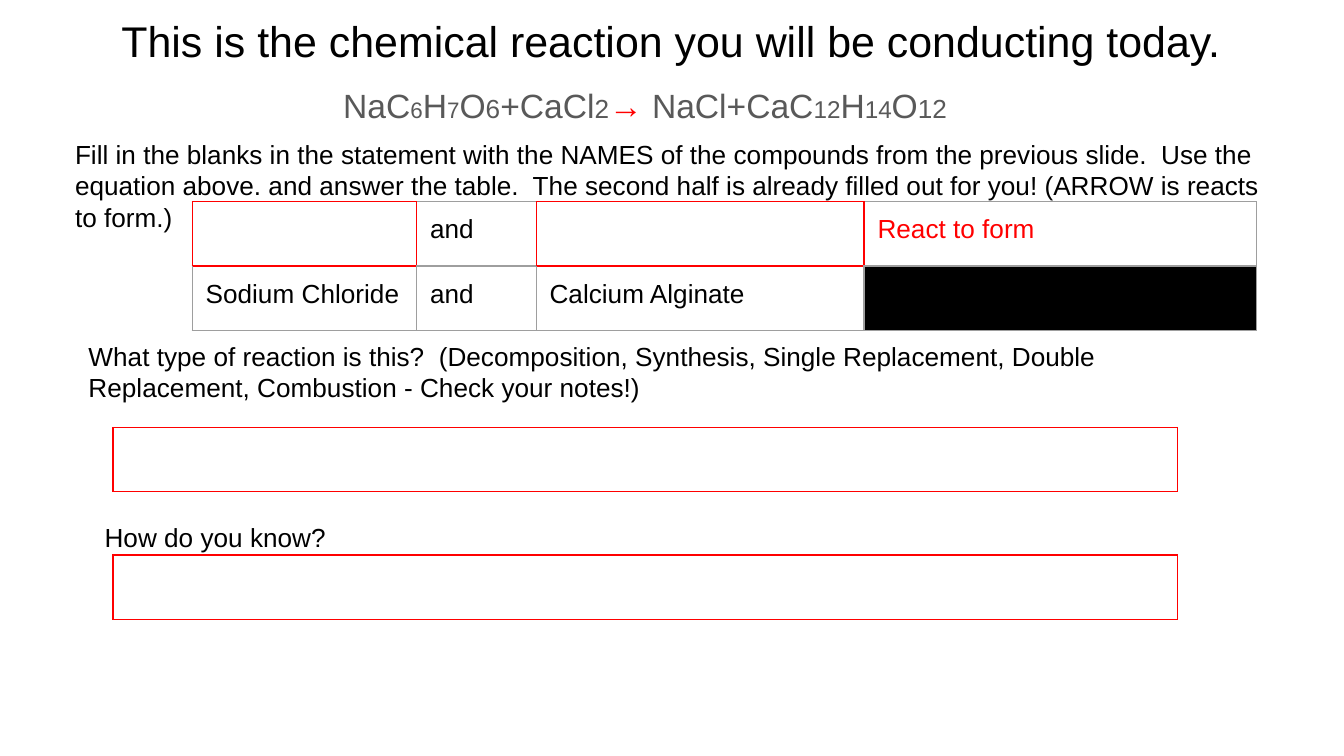
from typing import NamedTuple

from lxml import etree
from pptx import Presentation
from pptx.dml.color import RGBColor
from pptx.enum import text as t
from pptx.oxml import ns
from pptx.util import Inches, Pt

BLACK = RGBColor(0x00, 0x00, 0x00)
GRAY = RGBColor(0x59, 0x59, 0x59)
RULE = RGBColor(0x9E, 0x9E, 0x9E)
RED = RGBColor(0xFF, 0x00, 0x00)
FONT = "Arial"
BODY_SIZE = 14
MARGIN = Inches(0.1)
ROW_HEIGHT = 0.48


class Span(NamedTuple):
    text: str
    size: float = BODY_SIZE
    color: RGBColor = BLACK


class Label(NamedTuple):
    left: float
    top: float
    width: float
    height: float
    text: str


class Cell(NamedTuple):
    text: str = ""
    color: RGBColor = BLACK
    filled: bool = False

    @property
    def is_answer(self) -> bool:
        return not self.text and not self.filled


class Grid(NamedTuple):
    left: float
    top: float
    widths: list[float]
    rows: list[list[Cell]]


EQUATION = [
    Span("NaC", 18, GRAY), Span("6", 12, GRAY),
    Span("H", 18, GRAY), Span("7", 12, GRAY),
    Span("O", 18, GRAY), Span("6", 14, GRAY),
    Span("+CaCl", 18, GRAY), Span("2", 14, GRAY),
    Span("→", 18, RED),
    Span(" NaCl+CaC", 18, GRAY), Span("12", 13, GRAY),
    Span("H", 18, GRAY), Span("14", 13, GRAY),
    Span("O", 18, GRAY), Span("12", 14, GRAY),
]
LABELS = [
    Label(0.46, 0.93, 9.09, 0.49,
          "Fill in the blanks in the statement with the NAMES of the compounds "
          "from the previous slide.  Use the equation above. and answer the table.  "
          "The second half is already filled out for you! (ARROW is reacts to form.)"),
    Label(0.56, 2.43, 8.88, 0.68,
          "What type of reaction is this?  (Decomposition, Synthesis, Single "
          "Replacement, Double Replacement, Combustion - Check your notes!)"),
    Label(0.68, 3.78, 8.88, 0.49, "How do you know?"),
]
GRIDS = [
    Grid(1.43, 1.5, [1.67, 0.89, 2.44, 2.92], [
        [Cell(), Cell("and"), Cell(), Cell("React to form", RED)],
        [Cell("Sodium Chloride"), Cell("and"), Cell("Calcium Alginate"),
         Cell(filled=True)],
    ]),
    Grid(0.84, 3.18, [7.92], [[Cell()]]),
    Grid(0.84, 4.13, [7.92], [[Cell()]]),
]
# Border tag and the row and column step to the neighbour on that side
SIDES = [("a:lnL", 0, -1), ("a:lnR", 0, 1), ("a:lnT", -1, 0), ("a:lnB", 1, 0)]


def add_span(para, span: Span) -> None:
    run = para.add_run()
    run.text = span.text
    run.font.name = FONT
    run.font.size = Pt(span.size)
    run.font.color.rgb = span.color


def set_empty_size(para, size: float) -> None:
    """Set the line height that an empty paragraph takes."""
    end = etree.SubElement(para._p, ns.qn("a:endParaRPr"), sz=str(size * 100))
    etree.SubElement(end, ns.qn("a:latin"), typeface=FONT)


def set_margins(target) -> None:
    target.margin_left = target.margin_right = MARGIN
    target.margin_top = target.margin_bottom = MARGIN


def add_box(slide, left: float, top: float, width: float, height: float,
            spans: list[Span]):
    """Add a wrapped text box and return its paragraph."""
    box = slide.shapes.add_textbox(
        Inches(left), Inches(top), Inches(width), Inches(height))
    frame = box.text_frame
    frame.word_wrap = True
    set_margins(frame)
    para = frame.paragraphs[0]
    for span in spans:
        add_span(para, span)
    return para


def add_border(cell, tag: str, color: RGBColor) -> None:
    properties = cell._tc.get_or_add_tcPr()
    line = etree.SubElement(properties, ns.qn(tag), w=str(Pt(0.75)))
    fill = etree.SubElement(line, ns.qn("a:solidFill"))
    etree.SubElement(fill, ns.qn("a:srgbClr"), val=str(color))


def border_color(grid: Grid, row: int, column: int,
                 row_step: int, column_step: int) -> RGBColor:
    """Red where either cell sharing the edge awaits an answer."""
    if grid.rows[row][column].is_answer:
        return RED
    next_row, next_column = row + row_step, column + column_step
    inside = (0 <= next_row < len(grid.rows)
              and 0 <= next_column < len(grid.widths))
    if inside and grid.rows[next_row][next_column].is_answer:
        return RED
    return RULE


def add_grid(slide, grid: Grid) -> None:
    table = slide.shapes.add_table(
        len(grid.rows), len(grid.widths), Inches(grid.left), Inches(grid.top),
        Inches(sum(grid.widths)), Inches(ROW_HEIGHT * len(grid.rows))).table
    table.first_row = table.horz_banding = False
    for column, width in zip(table.columns, grid.widths):
        column.width = Inches(width)
    for r, row in enumerate(grid.rows):
        for c, content in enumerate(row):
            cell = table.cell(r, c)
            set_margins(cell)
            for tag, row_step, column_step in SIDES:
                add_border(cell, tag, border_color(grid, r, c, row_step, column_step))
            if content.filled:
                cell.fill.solid()
                cell.fill.fore_color.rgb = BLACK
            else:
                cell.fill.background()
            para = cell.text_frame.paragraphs[0]
            if content.text:
                add_span(para, Span(content.text, color=content.color))
            else:
                set_empty_size(para, BODY_SIZE)


def set_title(slide, span: Span) -> None:
    title = slide.shapes.title
    title.left, title.top = Inches(0.34), Inches(0.01)
    title.width, title.height = Inches(9.32), Inches(0.63)
    frame = title.text_frame
    set_margins(frame)
    frame.auto_size = t.MSO_AUTO_SIZE.NONE
    frame.vertical_anchor = t.MSO_ANCHOR.TOP
    para = frame.paragraphs[0]
    para.alignment = t.PP_ALIGN.CENTER
    add_span(para, span)


def main() -> None:
    deck = Presentation()
    deck.slide_width = Inches(10)
    deck.slide_height = deck.slide_width * 9 // 16
    slide = deck.slides.add_slide(deck.slide_layouts[5])

    set_title(slide, Span(
        "This is the chemical reaction you will be conducting today.", 23))
    equation = add_box(slide, 0.14, 0.49, 9.32, 0.63, EQUATION)
    equation.alignment = t.PP_ALIGN.CENTER
    equation.line_spacing = 1.15
    for label in LABELS:
        add_box(slide, label.left, label.top, label.width, label.height,
                [Span(label.text)])
    for grid in GRIDS:
        add_grid(slide, grid)
    deck.save("out.pptx")


if __name__ == "__main__":
    main()
